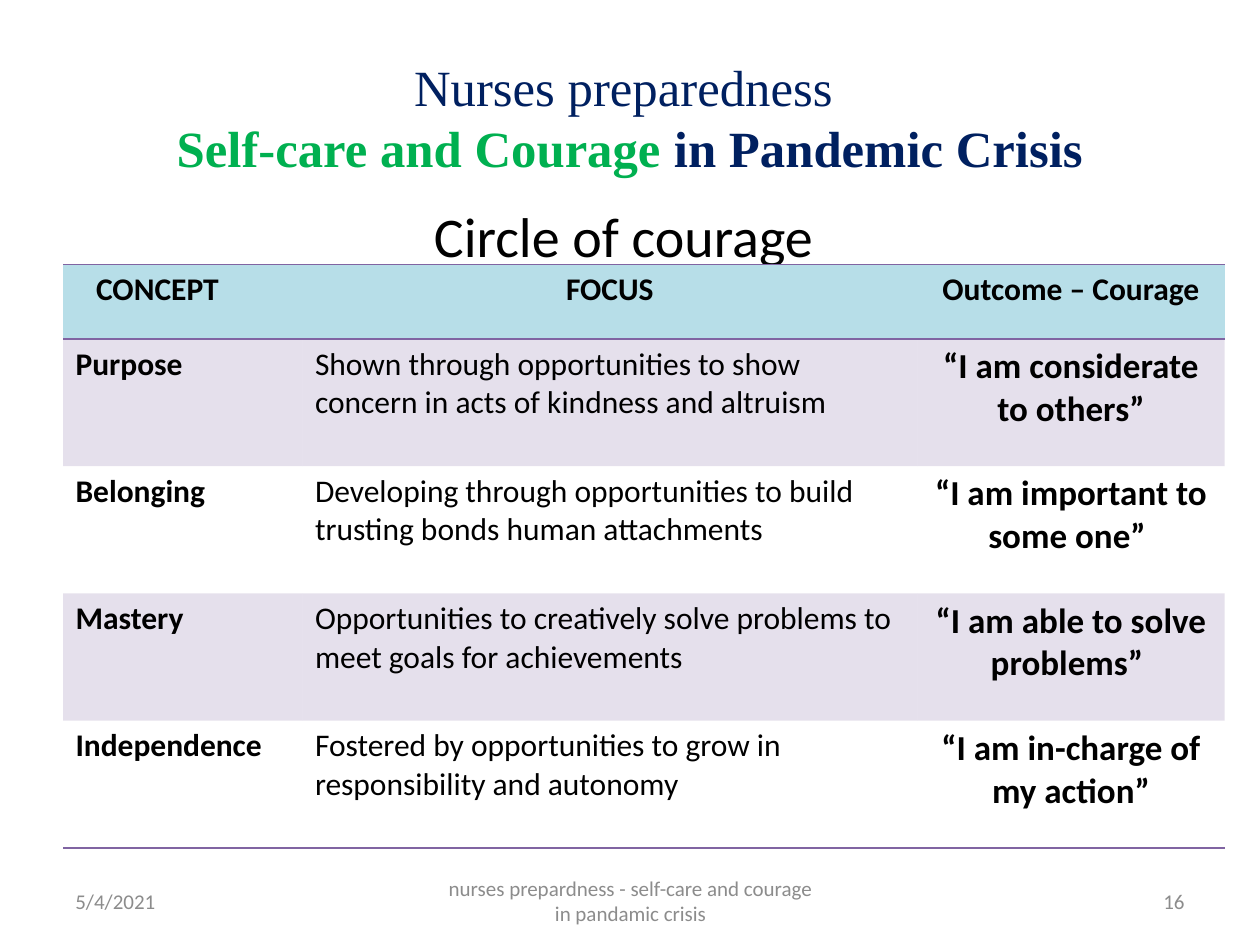
from pptx import Presentation
from pptx.dml.color import RGBColor
from pptx.enum.text import MSO_ANCHOR as Anchor, MSO_AUTO_SIZE as AutoSize, PP_ALIGN as Align
from pptx.oxml.ns import qn
from pptx.util import Inches, Pt
from lxml.etree import SubElement

NAVY = RGBColor(0x00, 0x20, 0x60)
GREEN = RGBColor(0x00, 0xB0, 0x50)
BLACK = RGBColor(0x00, 0x00, 0x00)
GREY = RGBColor(0x8C, 0x8C, 0x8C)
AQUA = RGBColor(0xB7, 0xDE, 0xE8)
PURPLE = RGBColor(0x80, 0x64, 0xA2)
PLAIN_TABLE = "{2D5ABB26-0587-4C30-8999-92F81FD0307C}"

COLUMNS = [1.9, 4.88, 2.44]
ROW_HEIGHTS = [0.59] + [1.01] * 4
ROWS = [
    ("CONCEPT", "FOCUS", "Outcome – Courage"),
    ("Purpose", "Shown through opportunities to show concern in acts of kindness and altruism",
     "“I am considerate to others”"),
    ("Belonging", "Developing through opportunities to build trusting bonds human attachments",
     "“I am important to some one” "),
    ("Mastery", "Opportunities to creatively solve problems to meet goals for achievements",
     "“I am able to solve problems” "),
    ("Independence", "Fostered by opportunities to grow in responsibility and autonomy",
     "“I am in-charge of my action”"),
]


class SlideBuilder:
    heading_font = "Times New Roman"
    body_font = "Calibri"

    def __init__(self, page):
        self.page = page

    def place(self, box, left, top, width, height):
        lengths = {"left": left, "top": top, "width": width, "height": height}
        for name, value in lengths.items():
            setattr(box, name, Inches(value))

    def add_span(self, para, text, size, color=BLACK, bold=False, font=None):
        span = para.add_run()
        span.text = text
        style = {"name": font or self.body_font, "size": Pt(size), "bold": bold}
        for name, value in style.items():
            setattr(span.font, name, value)
        span.font.color.rgb = color

    def title(self, lines, area):
        box = self.page.shapes.title
        self.place(box, *area)
        frame = box.text_frame
        frame.auto_size = AutoSize.NONE
        frame.vertical_anchor = Anchor.MIDDLE
        para = frame.paragraphs[0]
        para.alignment = Align.CENTER
        for index, line in enumerate(lines):
            if index:
                para.add_line_break()
            for text, color, bold in line:
                self.add_span(para, text, 29, color, bold, self.heading_font)

    def body(self, text, area):
        box = self.page.placeholders[1]
        self.place(box, *area)
        box.text_frame.auto_size = AutoSize.NONE
        para = box.text_frame.paragraphs[0]
        para.alignment = Align.CENTER
        # No bullet and no hanging indent
        props = para._p.get_or_add_pPr()
        props.set("marL", "0")
        props.set("indent", "0")
        SubElement(props, qn("a:buNone"))
        self.add_span(para, text, 32)

    def footer(self, text, left, width, align):
        box = self.page.shapes.add_textbox(Inches(left), Inches(6.95), Inches(width), Inches(0.4))
        frame = box.text_frame
        frame.word_wrap = True
        frame.vertical_anchor = Anchor.MIDDLE
        frame.paragraphs[0].alignment = align
        self.add_span(frame.paragraphs[0], text, 12, GREY)

    def border(self, cell, side):
        line = SubElement(cell._tc.get_or_add_tcPr(), qn(f"a:ln{side}"), w=str(Pt(1)))
        fill = SubElement(line, qn("a:solidFill"))
        SubElement(fill, qn("a:srgbClr"), val=str(PURPLE))

    def fill(self, cell, color, opacity=100):
        cell.fill.solid()
        cell.fill.fore_color.rgb = color
        if opacity < 100:
            tint = cell._tc.tcPr.find(qn("a:solidFill")).find(qn("a:srgbClr"))
            SubElement(tint, qn("a:alpha"), val=str(opacity * 1000))

    def table(self, rows, left, top):
        shape = self.page.shapes.add_table(
            len(rows), len(COLUMNS), Inches(left), Inches(top),
            Inches(sum(COLUMNS)), Inches(sum(ROW_HEIGHTS)))
        table = shape.table
        table._tbl.tblPr.find(qn("a:tableStyleId")).text = PLAIN_TABLE
        for column, width in zip(table.columns, COLUMNS):
            column.width = Inches(width)
        for row, height in zip(table.rows, ROW_HEIGHTS):
            row.height = Inches(height)
        for r, texts in enumerate(rows):
            header = r == 0
            for c, text in enumerate(texts):
                cell = table.cell(r, c)
                para = cell.text_frame.paragraphs[0]
                outcome = c == 2
                para.alignment = Align.CENTER if header or outcome else Align.LEFT
                self.add_span(para, text, 20 if outcome and not header else 18,
                              bold=header or c != 1)
                if header:
                    self.border(cell, "T")
                if header or r == len(rows) - 1:
                    self.border(cell, "B")
                if header:
                    self.fill(cell, AQUA)
                elif r % 2:
                    self.fill(cell, PURPLE, 20)
                else:
                    cell.fill.background()
        # The first heading sits left of its column's centre
        table.cell(0, 0).margin_right = Inches(0.5)


def main():
    deck = Presentation()
    deck.slide_width, deck.slide_height = Inches(10), Inches(7.5)
    builder = SlideBuilder(deck.slides.add_slide(deck.slide_layouts[1]))

    # Title and subtitle
    builder.title([
        [("Nurses preparedness ", NAVY, False)],
        [("Self-care and Courage ", GREEN, True), ("in Pandemic Crisis", NAVY, True)],
    ], (0.5, 0.3, 9, 1.25))
    builder.body("Circle of courage ", (0.5, 1.55, 9, 4.95))

    # Concepts table
    builder.table(ROWS, 0.5, 2.1)

    # Date, footer and page number
    builder.footer("5/4/2021", 0.5, 2.33, Align.LEFT)
    builder.footer("nurses prepardness - self-care and courage in pandamic crisis",
                   3.42, 3.17, Align.CENTER)
    builder.footer("16", 7.17, 2.33, Align.RIGHT)

    deck.save("out.pptx")


if __name__ == "__main__":
    main()
